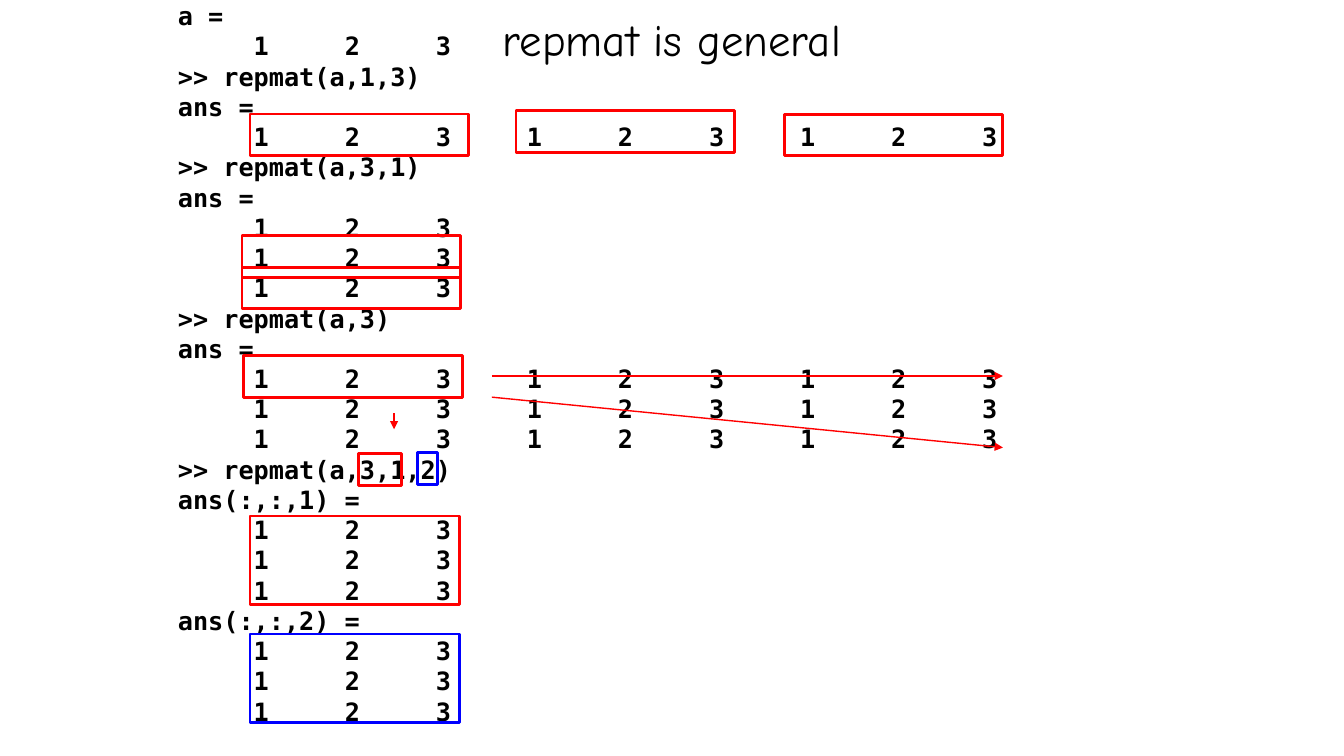
"""Build the slide on how repmat tiles a row vector."""
import pptx
import pptx.dml.color
import pptx.enum.shapes
import pptx.enum.text
import pptx.oxml.ns
import pptx.util
import lxml.etree

Pt = pptx.util.Pt
RGB = pptx.dml.color.RGBColor.from_string
qn = pptx.oxml.ns.qn
sub = lxml.etree.SubElement

theme = {
    "ink": RGB("000000"), "red": RGB("FF0000"), "blue": RGB("0000FF"),
    "code": ("DejaVu Sans Mono", 18, True),
    "head": ("Comic Neue", 32, False),
}
char = 10.84
pitch = 21.6
row = "\t1\t2\t3"
code = [
    "a =", row,
    ">> repmat(a,1,3)", "ans =", row * 3,
    ">> repmat(a,3,1)", "ans =", *[row] * 3,
    ">> repmat(a,3)", "ans =", *[row * 3] * 3,
    ">> repmat(a,3,1,2)",
    "ans(:,:,1) =", *[row] * 3,
    "ans(:,:,2) =", *[row] * 3,
]


def place(shape, box, anchor):
    shape.left, shape.top, shape.width, shape.height = [Pt(v) for v in box]
    frame = shape.text_frame
    frame.word_wrap = True
    frame.auto_size = pptx.enum.text.MSO_AUTO_SIZE.NONE
    frame.vertical_anchor = anchor
    return frame


def style(para, look):
    for run in para.runs:
        run.font.name, size, run.font.bold = theme[look]
        run.font.size = Pt(size)
        run.font.color.rgb = theme["ink"]


deck = pptx.Presentation()
deck.slide_width, deck.slide_height = Pt(960), Pt(540)
slide = deck.slides.add_slide(deck.slide_layouts[5])
anchor = pptx.enum.text.MSO_ANCHOR

title = place(slide.shapes.title, (120, 4.5, 720, 46), anchor.MIDDLE)
title.text = "repmat is general"
title.paragraphs[0].alignment = pptx.enum.text.PP_ALIGN.CENTER
style(title.paragraphs[0], "head")

panel = slide.shapes.add_textbox(0, 0, 0, 0)
body = place(panel, (120, -3.2, 720, 530.6), anchor.TOP)
body.text = "\n".join(code)
for para in body.paragraphs:
    style(para, "code")
    para.line_spacing = Pt(pitch)
    tabs = sub(para._p.get_or_add_pPr(), qn("a:tabLst"))
    for col in range(9):
        stop = Pt(char * (5 + 6 * col))
        sub(tabs, qn("a:tab"), pos=str(stop), algn="l")

wide, high = 156, 29.5
boxes = [
    (178.6, 81.4, wide, high, "red"),
    (368.6, 79.2, wide, high, "red"),
    (560.2, 81.8, wide, high, "red"),
    (174.2, 254.2, wide, high, "red"),
    (172.8, 190.8, wide, high, "red"),
    (172.8, 168.5, wide, high, "red"),
    (256.3, 324, 30.5, 23, "red"),
    (178.6, 368.6, 149.8, 63.4, "red"),
    (298.1, 323.3, 14.4, 23, "blue"),
    (178.6, 452.9, 149.8, 63.4, "blue"),
]
for *box, hue in boxes:
    frame = slide.shapes.add_shape(
        pptx.enum.shapes.MSO_SHAPE.RECTANGLE, *[Pt(v) for v in box])
    frame.shadow.inherit = False
    frame.fill.background()
    frame.line.color.rgb = theme[hue]
    frame.line.width = Pt(2)

arrows = [
    (281.5, 295.2, 281.5, 306.7),
    (351.4, 268.6, 716.4, 268.6),
    (351.4, 283.7, 716.4, 319.7),
]
for ends in arrows:
    arrow = slide.shapes.add_connector(
        pptx.enum.shapes.MSO_CONNECTOR.STRAIGHT, *[Pt(v) for v in ends])
    arrow.line.color.rgb = theme["red"]
    arrow.line.width = Pt(1)
    sub(arrow.line._get_or_add_ln(), qn("a:tailEnd"), type="triangle")
    sub(arrow._element.spPr, qn("a:effectLst"))

deck.save("out.pptx")
